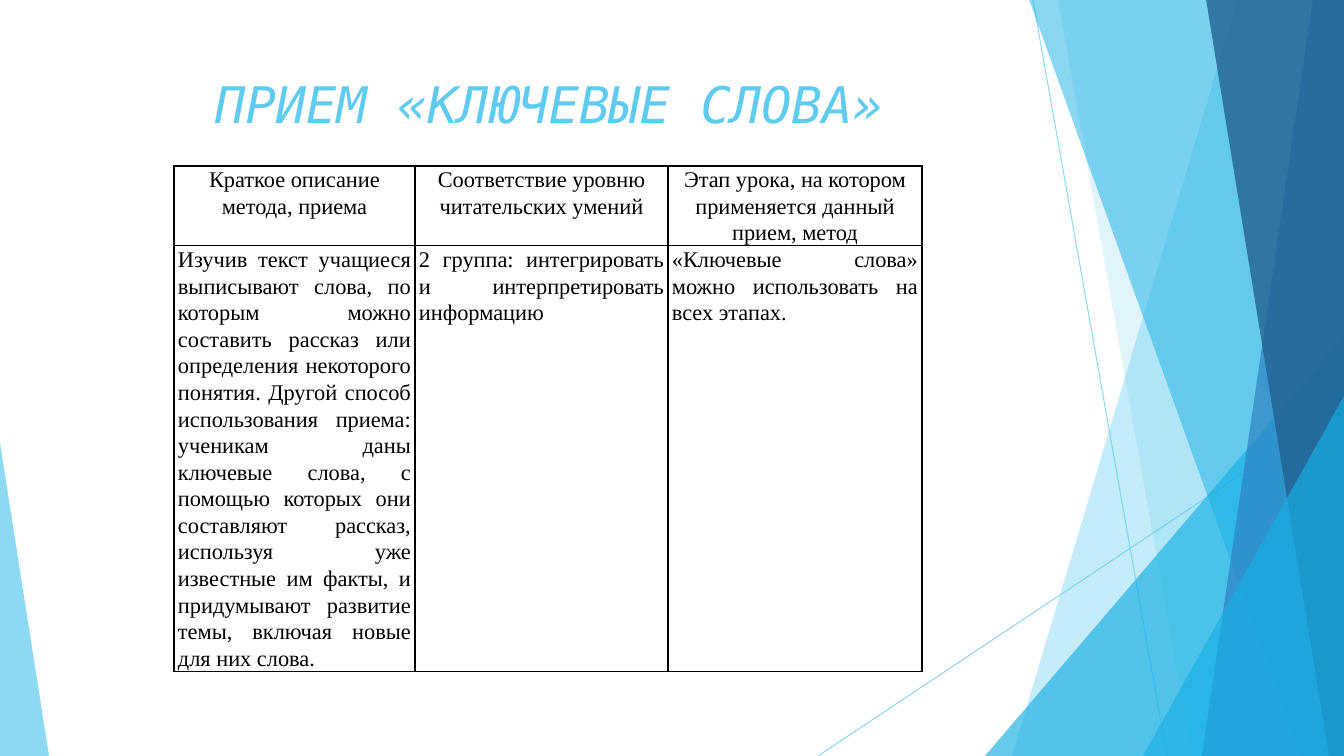
from lxml import etree
from pptx import Presentation
from pptx.dml.color import RGBColor
from pptx.enum.shapes import MSO_CONNECTOR, MSO_SHAPE
from pptx.enum.text import MSO_ANCHOR, PP_ALIGN
from pptx.oxml.ns import qn
from pptx.util import Pt

STRAIGHT = MSO_CONNECTOR.STRAIGHT
TRIANGLE = MSO_SHAPE.ISOSCELES_TRIANGLE
TOP = MSO_ANCHOR.TOP
CENTER, JUSTIFY = PP_ALIGN.CENTER, PP_ALIGN.JUSTIFY

WIDTH, HEIGHT = 1344, 756
EMU_PER_PX = 914400 / 100.8
COLORS = {
    "sky": "5FCBEF",
    "cyan": "17B0E4",
    "blue": "2E83C3",
    "navy": "226292",
    "black": "000000",
}
HEADERS = [
    "Краткое описание метода, приема",
    "Соответствие уровню читательских умений",
    "Этап урока, на котором применяется данный прием, метод",
]
DETAILS = [
    "Изучив текст учащиеся выписывают слова, по которым можно составить рассказ "
    "или определения некоторого понятия. Другой способ использования приема: "
    "ученикам даны ключевые слова, с помощью которых они составляют рассказ, "
    "используя уже известные им факты, и придумывают развитие темы, включая "
    "новые для них слова.",
    "2 группа: интегрировать и интерпретировать информацию",
    "«Ключевые слова» можно использовать на всех этапах.",
]


def px(n):
    return round(n * EMU_PER_PX)


def rgb(name):
    return RGBColor.from_string(COLORS[name])


def set_alpha(shape, percent):
    color = next(shape._element.spPr.iter(qn("a:srgbClr")))
    etree.SubElement(color, qn("a:alpha")).set("val", str(percent * 1000))


def paint(shape, color, alpha):
    shape.shadow.inherit = False
    shape.fill.solid()
    shape.fill.fore_color.rgb = rgb(color)
    shape.line.fill.background()
    set_alpha(shape, alpha)


def add_line(s, x1, y1, x2, y2):
    line = s.shapes.add_connector(STRAIGHT, px(x1), px(y1), px(x2), px(y2))
    line.line.color.rgb = rgb("sky")
    line.line.width = Pt(0.75)
    set_alpha(line, 70)
    etree.SubElement(line._element.spPr, qn("a:effectLst"))


def add_ribbon(s, top_x, bottom_x, color, alpha):
    outline = s.shapes.build_freeform(px(top_x), px(-1), scale=1.0)
    corners = [(WIDTH, -1), (WIDTH, HEIGHT), (bottom_x, HEIGHT)]
    outline.add_line_segments([(px(x), px(y)) for x, y in corners], close=True)
    paint(outline.convert_to_shape(), color, alpha)


def add_triangle(s, x, y, width, apex, color, alpha):
    shape = s.shapes.add_shape(TRIANGLE, px(x), px(y), px(width), px(HEIGHT - y))
    shape.adjustments[0] = apex
    paint(shape, color, alpha)


def add_decoration(s):
    add_line(s, 1033, 0, 1167, HEIGHT)
    add_line(s, WIDTH, 406, 818, HEIGHT)
    add_ribbon(s, 1238, 1012, "sky", 36)
    add_ribbon(s, 1058, 1192, "sky", 20)
    add_triangle(s, 985, 336, 359, 1, "cyan", 66)
    add_ribbon(s, 1029, 1301, "cyan", 50)
    add_ribbon(s, 1313, 1202, "blue", 70)
    add_ribbon(s, 1206, 1329, "navy", 80)
    add_triangle(s, 1143, 396, 201, 1, "cyan", 66)
    add_triangle(s, 0, 443, 49, 0, "sky", 70)


def format_run(r, font, size, color):
    r.font.name = font
    r.font.size = Pt(size)
    r.font.color.rgb = rgb(color)


def set_title(s, text):
    title = s.shapes.title
    title.left, title.top, title.width, title.height = map(px, (75, 68, 948, 145))
    tf = title.text_frame
    tf.text = text
    tf.vertical_anchor = TOP
    p = tf.paragraphs[0]
    p.alignment = CENTER
    format_run(p.runs[0], "DejaVu Sans Mono", 36, "sky")
    p.runs[0].font.italic = True


def add_borders(cell):
    tc_pr = cell._tc.get_or_add_tcPr()
    for i, side in enumerate(("lnL", "lnR", "lnT", "lnB")):
        ln = etree.Element(qn(f"a:{side}"), w=str(Pt(1)))
        fill = etree.SubElement(ln, qn("a:solidFill"))
        etree.SubElement(fill, qn("a:srgbClr"), val=COLORS["black"])
        tc_pr.insert(i, ln)


def fill_cell(cell, text, alignment):
    cell.fill.background()
    cell.margin_left = cell.margin_right = px(4)
    cell.margin_top = cell.margin_bottom = 0
    cell.text_frame.text = text
    p = cell.text_frame.paragraphs[0]
    p.alignment = alignment
    p.line_spacing = 1.07
    format_run(p.runs[0], "Times New Roman", 16, "black")
    add_borders(cell)


def add_method_table(s):
    widths, heights = (241, 253, 254), (79, 426)
    frame = s.shapes.add_table(
        2, 3, px(174), px(166), px(sum(widths)), px(sum(heights))
    )
    table = frame.table
    table.horz_banding = False
    for column, width in zip(table.columns, widths):
        column.width = px(width)
    for row, height in zip(table.rows, heights):
        row.height = px(height)
    table.first_row = False
    for row, texts, alignment in zip(
        table.rows, (HEADERS, DETAILS), (CENTER, JUSTIFY)
    ):
        for cell, text in zip(row.cells, texts):
            fill_cell(cell, text, alignment)


def main():
    prs = Presentation()
    prs.slide_width, prs.slide_height = px(WIDTH), px(HEIGHT)
    s = prs.slides.add_slide(prs.slide_layouts[5])
    add_decoration(s)
    set_title(s, "ПРИЕМ «КЛЮЧЕВЫЕ СЛОВА»")
    add_method_table(s)
    prs.save("out.pptx")


if __name__ == "__main__":
    main()
